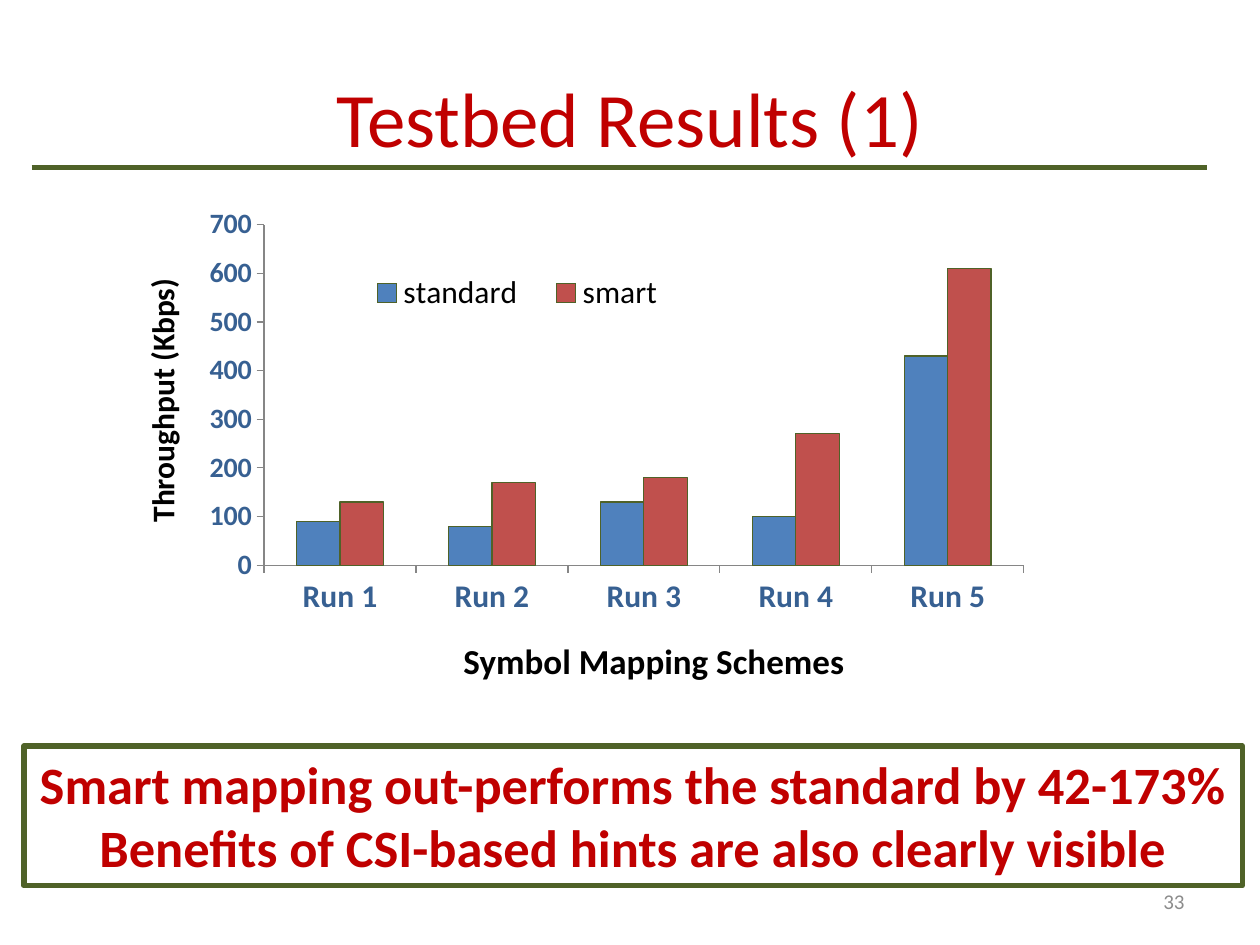
import pptx
import pptx.chart.data
import pptx.dml.color
import pptx.enum.chart
import pptx.enum.shapes
import pptx.enum.text
import pptx.oxml
import pptx.oxml.ns
import pptx.util

RGBColor = pptx.dml.color.RGBColor
ALIGN = pptx.enum.text.PP_ALIGN
ANCHOR = pptx.enum.text.MSO_ANCHOR
CRIMSON = RGBColor(0xC0, 0x00, 0x00)
OLIVE = RGBColor(0x4F, 0x62, 0x28)
NAVY = RGBColor(0x37, 0x60, 0x92)
BLUE = RGBColor(0x4F, 0x81, 0xBD)
RED = RGBColor(0xC0, 0x50, 0x4D)
BLACK = RGBColor(0, 0, 0)
GREY = RGBColor(0x8C, 0x8C, 0x8C)
AXIS_GREY = RGBColor(0x86, 0x86, 0x86)
COLUMNS, ROWS = 100, 75


class SlideBuilder:
    font_name = "Calibri"

    def __init__(self, deck):
        self.deck = deck
        self.slide = deck.slides.add_slide(deck.slide_layouts[6])

    def place(self, left, top, width, height):
        across = self.deck.slide_width / COLUMNS
        down = self.deck.slide_height / ROWS
        return [round(n) for n in (left * across, top * down, width * across, height * down)]

    def style(self, font, size, color, bold=False):
        font.name = self.font_name
        font.size = pptx.util.Pt(size)
        font.color.rgb = color
        font.bold = bold

    def outline(self, line, color, width):
        line.color.rgb = color
        line.width = pptx.util.Pt(width)

    def fill_text(self, frame, lines, size, color, bold, align, anchor, wrap):
        frame.word_wrap = wrap
        frame.vertical_anchor = anchor
        for index, words in enumerate(lines):
            paragraph = frame.add_paragraph() if index else frame.paragraphs[0]
            paragraph.alignment = align
            run = paragraph.add_run()
            run.text = words
            self.style(run.font, size, color, bold)

    def text(self, area, words, size, color, bold=False, align=ALIGN.LEFT,
             anchor=ANCHOR.TOP, rotation=0, wrap=True):
        label = self.slide.shapes.add_textbox(*self.place(*area))
        label.rotation = rotation
        self.fill_text(label.text_frame, [words], size, color, bold, align, anchor, wrap)

    def framed_text(self, area, lines, size, color, border):
        frame = self.slide.shapes.add_shape(
            pptx.enum.shapes.MSO_SHAPE.RECTANGLE, *self.place(*area))
        frame.shadow.inherit = False
        frame.fill.background()
        self.outline(frame.line, border, 3)
        self.fill_text(frame.text_frame, lines, size, color, True,
                       ALIGN.CENTER, ANCHOR.TOP, False)

    def rule(self, left, right, row, color):
        x, y, width, _ = self.place(left, row, right - left, 0)
        line = self.slide.shapes.add_connector(
            pptx.enum.shapes.MSO_CONNECTOR.STRAIGHT, x, y, x + width, y)
        self.outline(line.line, color, 3)
        line._element.spPr.append(pptx.oxml.parse_xml(
            f'<a:effectLst {pptx.oxml.ns.nsdecls("a")}/>'))

    def layout(self, x, y, w, h, inner=False):
        target = '<c:layoutTarget val="inner"/>' if inner else ""
        return pptx.oxml.parse_xml(
            f'<c:layout {pptx.oxml.ns.nsdecls("c")}><c:manualLayout>{target}'
            '<c:xMode val="edge"/><c:yMode val="edge"/>'
            f'<c:x val="{x}"/><c:y val="{y}"/><c:w val="{w}"/><c:h val="{h}"/>'
            '</c:manualLayout></c:layout>')

    def set_layout(self, parent, position, layout):
        for old in parent.findall(pptx.oxml.ns.qn("c:layout")):
            parent.remove(old)
        parent.insert(position, layout)

    def column_chart(self, area, categories, series):
        data = pptx.chart.data.CategoryChartData()
        data.categories = categories
        for name, values, _ in series:
            data.add_series(name, values)
        chart = self.slide.shapes.add_chart(
            pptx.enum.chart.XL_CHART_TYPE.COLUMN_CLUSTERED, *self.place(*area), data).chart
        self.style(chart.font, 18, BLACK)
        chart.has_title = False
        plot = chart.plots[0]
        plot.gap_width = 150
        plot.overlap = 0
        plot.vary_by_categories = False
        for bars, (_, _, color) in zip(plot.series, series):
            bars.format.fill.solid()
            bars.format.fill.fore_color.rgb = color
            self.outline(bars.format.line, OLIVE, 0.75)
        for axis, size in ((chart.category_axis, 18), (chart.value_axis, 16)):
            self.style(axis.tick_labels.font, size, NAVY, True)
            axis.has_major_gridlines = False
            axis.major_tick_mark = pptx.enum.chart.XL_TICK_MARK.OUTSIDE
            axis.minor_tick_mark = pptx.enum.chart.XL_TICK_MARK.NONE
            self.outline(axis.format.line, AXIS_GREY, 0.75)
        chart.value_axis.minimum_scale = 0
        chart.value_axis.maximum_scale = 700
        chart.value_axis.major_unit = 100
        chart.has_legend = True
        legend = chart.legend
        legend.position = pptx.enum.chart.XL_LEGEND_POSITION.LEFT
        legend.include_in_layout = True
        self.style(legend.font, 18, BLACK)
        self.set_layout(legend._element, 1, self.layout(0.18, 0.15, 0.4, 0.14))
        plot_area = chart._chartSpace.chart.plotArea
        self.set_layout(plot_area, 0, self.layout(0.08, 0.06, 0.9, 0.8, inner=True))


def main():
    deck = pptx.Presentation()
    deck.slide_width = pptx.util.Inches(10)
    deck.slide_height = pptx.util.Inches(7.5)
    results = SlideBuilder(deck)
    results.text((5, 3, 90, 12.5), "Testbed Results (1)", 44, CRIMSON,
                 align=ALIGN.CENTER, anchor=ANCHOR.MIDDLE)
    results.rule(2.5, 95.8, 13.3, OLIVE)
    results.column_chart(
        (15.6, 15.8, 67, 33.8),
        [f"Run {number}" for number in range(1, 6)],
        [("standard", (90, 80, 130, 100, 430), BLUE),
         ("smart", (130, 170, 180, 270, 610), RED)])
    results.text((1.6, 29.2, 22.5, 4), "Throughput (Kbps)", 18, BLACK, True,
                 rotation=270, wrap=False)
    results.text((35.8, 50.3, 32.5, 4.4), "Symbol Mapping Schemes", 20, BLACK, True, wrap=False)
    results.framed_text(
        (1.9, 59.2, 96.7, 11.1),
        ["Smart mapping out-performs the standard by 42-173%",
         "Benefits of CSI-based hints are also clearly visible"], 30, CRIMSON, OLIVE)
    results.text((71.7, 69.5, 23.3, 4), "33", 12, GREY, align=ALIGN.RIGHT, anchor=ANCHOR.MIDDLE)
    deck.save("out.pptx")


if __name__ == "__main__":
    main()
